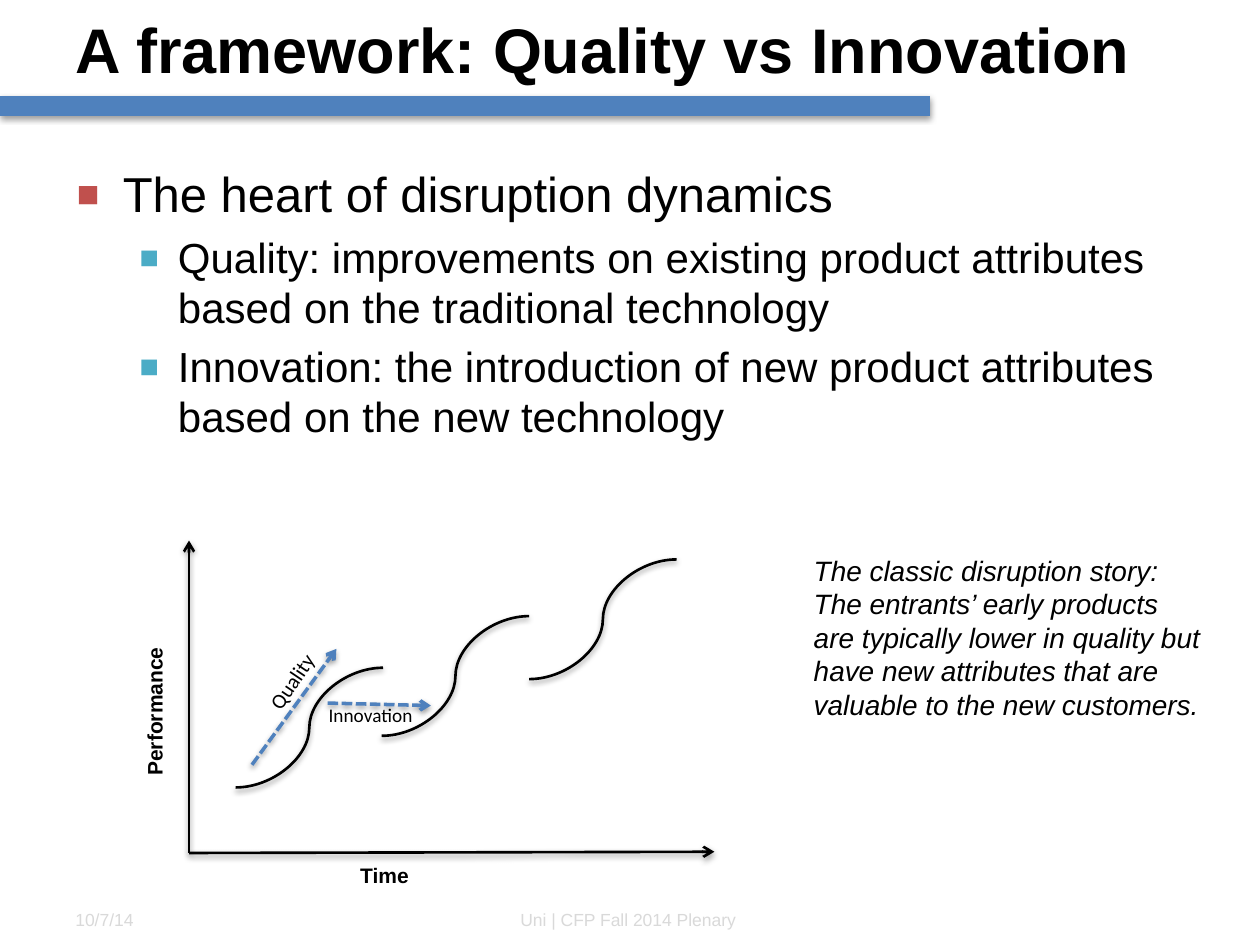
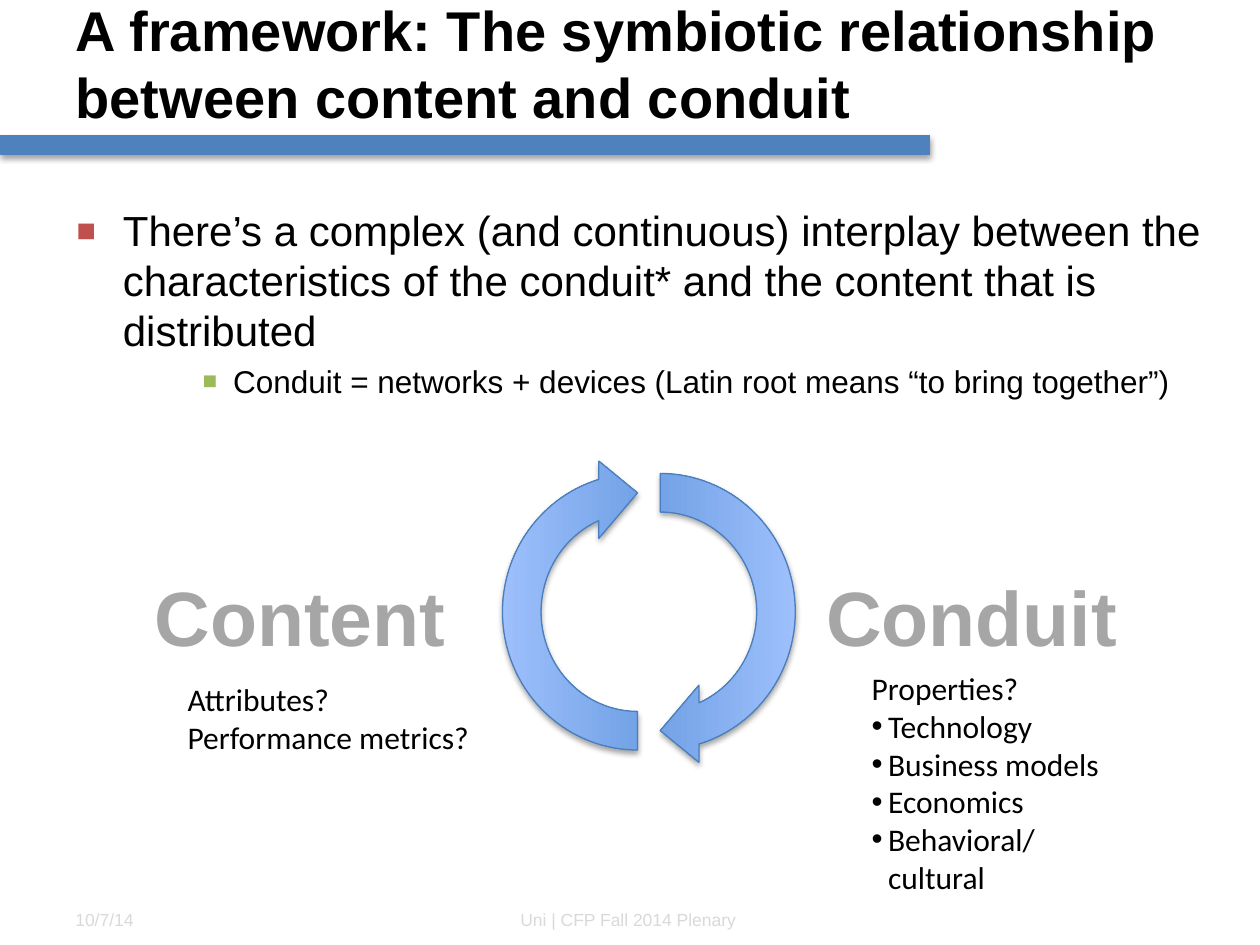
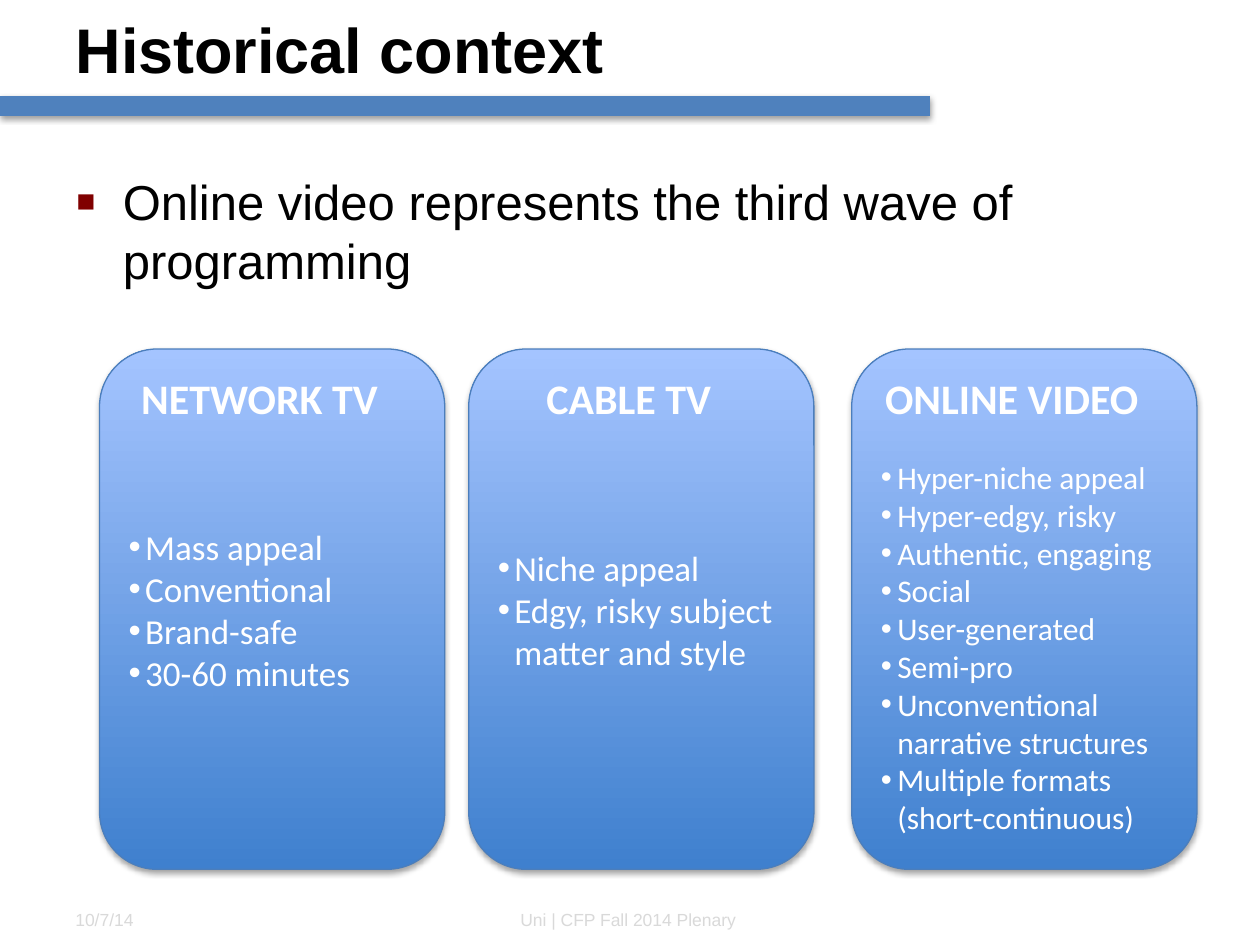
"""Builds three slides on disruption, content and conduit, and waves of programming."""
from dataclasses import dataclass
from typing import NamedTuple, Optional

from lxml.etree import SubElement
from pptx import Presentation
from pptx.dml.color import RGBColor
from pptx.enum.dml import MSO_LINE
from pptx.enum.shapes import MSO_CONNECTOR, MSO_SHAPE
from pptx.enum.text import MSO_ANCHOR, MSO_AUTO_SIZE, PP_ALIGN
from pptx.oxml.ns import qn
from pptx.util import Emu, Pt

EMU_PER_PX = 9144
BLACK, WHITE, BLUE = "000000", "FFFFFF", "4F81BD"
RED, TEAL, GREEN, MAROON = "C0504D", "4BACC6", "9BBB59", "800000"
FOOTER_GRAY, WORD_GRAY = "D9D9D9", "A6A6A6"
GRADIENT_BOTTOM, GRADIENT_TOP, OUTLINE = "3F80CE", "A4C4FF", "4B7EBC"


class Box(NamedTuple):
    """Left, top, width and height in px."""
    left: int
    top: int
    width: int
    height: int


class Bullet(NamedTuple):
    """A bullet sign with its colour, size in percent and own hanging indent in px."""
    sign: str
    color: Optional[str] = None
    percent: int = 100
    indent: Optional[int] = None


@dataclass(frozen=True)
class Stroke:
    """A connector between two points in px."""
    start: tuple[int, int]
    end: tuple[int, int]
    color: str = BLACK
    weight: float = 1.5
    curved: bool = False
    dashed: bool = False
    arrow: bool = False


@dataclass(frozen=True)
class Label:
    """A free text box."""
    box: Box
    text: str
    size: int
    font: str = "Arial"
    color: str = BLACK
    bold: bool = False
    italic: bool = False
    align: PP_ALIGN = PP_ALIGN.LEFT
    rotation: float = 0
    anchor: MSO_ANCHOR = MSO_ANCHOR.TOP


@dataclass(frozen=True)
class Panel:
    """A rounded panel with a heading and bullet points."""
    left: int
    heading: str
    points: tuple[str, ...]
    size: int = 20
    top_margin: int = 5


class ListItem(NamedTuple):
    """A line of the body list."""
    text: str
    size: int
    bullet: Bullet
    level: int = 0
    space_after: Optional[int] = None


DOT = Bullet("•", indent=13)
FOOTERS = (
    Label(Box(50, 710, 233, 40), "10/7/14", 10, color=FOOTER_GRAY, anchor=MSO_ANCHOR.MIDDLE),
    Label(Box(340, 710, 317, 40), "Uni | CFP Fall 2014 Plenary", 10, color=FOOTER_GRAY,
          align=PP_ALIGN.CENTER, anchor=MSO_ANCHOR.MIDDLE),
)


def px(length: int) -> Emu:
    """Turn px into EMU."""
    return Emu(length * EMU_PER_PX)


def rgb(color: str) -> RGBColor:
    """Turn a hex string into a colour."""
    return RGBColor.from_string(color)


def place(shape, box: Box) -> None:
    """Move and size a shape."""
    shape.left, shape.top, shape.width, shape.height = map(px, box)


def set_bullet(paragraph, bullet: Bullet) -> None:
    """Give a paragraph its bullet."""
    properties = paragraph._p.get_or_add_pPr()
    if bullet.indent is not None:
        properties.set("marL", str(px(bullet.indent)))
        properties.set("indent", str(px(-bullet.indent)))
    if bullet.color:
        SubElement(SubElement(properties, qn("a:buClr")), qn("a:srgbClr"), val=bullet.color)
    SubElement(properties, qn("a:buSzPct"), val=str(bullet.percent * 1000))
    SubElement(properties, qn("a:buFont"), typeface="Arial")
    SubElement(properties, qn("a:buChar"), char=bullet.sign)


def write_text(frame, text: str, *, size: int, font: str = "Arial", color: str = BLACK,
               bold: bool = False, italic: bool = False, align: PP_ALIGN = PP_ALIGN.LEFT,
               level: int = 0, bullet: Optional[Bullet] = None,
               space_after: Optional[int] = None) -> None:
    """Write one formatted paragraph at the end of a text frame."""
    first = frame.paragraphs[0]
    paragraph = frame.add_paragraph() if first.runs else first
    paragraph.alignment = align
    paragraph.level = level
    if space_after is not None:
        paragraph.space_after = Pt(space_after)
    if bullet:
        set_bullet(paragraph, bullet)
    run = paragraph.add_run()
    run.text = text
    run.font.name, run.font.size = font, Pt(size)
    run.font.bold, run.font.italic = bold, italic
    run.font.color.rgb = rgb(color)


def add_shadow(shape, opacity: int, distance: int) -> None:
    """Give a shape or connector a soft shadow below it."""
    properties = shape._element.spPr
    effects = properties.find(qn("a:effectLst"))
    if effects is None:
        effects = SubElement(properties, qn("a:effectLst"))
    shadow = SubElement(effects, qn("a:outerShdw"), blurRad="40000", dist=str(distance),
                        dir="5400000", rotWithShape="0")
    color = SubElement(shadow, qn("a:srgbClr"), val=BLACK)
    SubElement(color, qn("a:alpha"), val=str(opacity * 1000))


def add_stroke(slide, stroke: Stroke) -> None:
    """Draw a connector."""
    kind = MSO_CONNECTOR.CURVE if stroke.curved else MSO_CONNECTOR.STRAIGHT
    connector = slide.shapes.add_connector(kind, *map(px, stroke.start + stroke.end))
    connector.line.color.rgb = rgb(stroke.color)
    connector.line.width = Pt(stroke.weight)
    if stroke.dashed:
        connector.line.dash_style = MSO_LINE.SQUARE_DOT
    if stroke.arrow:
        SubElement(connector.line._get_or_add_ln(), qn("a:tailEnd"), type="arrow")
    add_shadow(connector, 38, 20000)


def add_text_box(slide, box: Box, anchor: MSO_ANCHOR = MSO_ANCHOR.TOP):
    """Add an empty wrapping text box."""
    shape = slide.shapes.add_textbox(*map(px, box))
    frame = shape.text_frame
    frame.word_wrap = True
    frame.auto_size = MSO_AUTO_SIZE.NONE
    frame.vertical_anchor = anchor
    return shape


def add_label(slide, label: Label) -> None:
    """Add a text box with one paragraph."""
    shape = add_text_box(slide, label.box, label.anchor)
    shape.rotation = label.rotation
    write_text(shape.text_frame, label.text, size=label.size, font=label.font,
               color=label.color, bold=label.bold, italic=label.italic, align=label.align)


def add_glossy_shape(slide, kind: MSO_SHAPE, box: Box):
    """Add a preset shape with the blue gradient, thin outline and shadow."""
    shape = slide.shapes.add_shape(kind, *map(px, box))
    shape.fill.gradient()
    shape.fill.gradient_angle = 90
    for stop, color in zip(shape.fill.gradient_stops, (GRADIENT_BOTTOM, GRADIENT_TOP)):
        stop.color.rgb = rgb(color)
    shape.line.color.rgb = rgb(OUTLINE)
    shape.line.width = Pt(0.75)
    shape.shadow.inherit = False
    add_shadow(shape, 35, 23000)
    return shape


def add_panel(slide, panel: Panel) -> None:
    """Add a rounded panel with its heading and points."""
    shape = add_glossy_shape(slide, MSO_SHAPE.ROUNDED_RECTANGLE, Box(panel.left, 277, 274, 413))
    frame = shape.text_frame
    frame.word_wrap = True
    frame.vertical_anchor = MSO_ANCHOR.MIDDLE
    frame.margin_top = px(panel.top_margin)
    for point in panel.points:
        write_text(frame, point, size=panel.size, font="Calibri", color=WHITE, bullet=DOT)
    add_label(slide, Label(Box(panel.left, 291, 254, 50), panel.heading, 24, "Calibri", WHITE,
                           bold=True, align=PP_ALIGN.CENTER))


def add_framed_slide(presentation, title: str, body_box: Box, items: tuple[ListItem, ...],
                     title_box: Box = Box(50, 2, 900, 73), title_size: int = 36,
                     bar_height: int = 84):
    """Add a slide with title, bar, list and footers."""
    slide = presentation.slides.add_slide(presentation.slide_layouts[1])
    heading, body = slide.shapes.title, slide.placeholders[1]
    for placeholder, box in ((heading, title_box), (body, body_box)):
        place(placeholder, box)
        placeholder.text_frame.auto_size = MSO_AUTO_SIZE.NONE
    write_text(heading.text_frame, title, size=title_size, bold=True)
    for item in items:
        write_text(body.text_frame, item.text, size=item.size, level=item.level,
                   bullet=item.bullet, space_after=item.space_after)
    add_stroke(slide, Stroke((0, bar_height), (738, bar_height), BLUE, 11.5))
    for footer in FOOTERS:
        add_label(slide, footer)
    return slide


def build_quality_slide(presentation) -> None:
    """Build the slide on quality and innovation."""
    sub_bullet = Bullet("▪", TEAL, 150)
    slide = add_framed_slide(
        presentation, "A framework: Quality vs Innovation", Box(50, 125, 900, 570), (
            ListItem("The heart of disruption dynamics", 28, Bullet("▪", RED, 150)),
            ListItem("Quality: improvements on existing product attributes based on the "
                     "traditional technology", 24, sub_bullet, 1),
            ListItem("Innovation: the introduction of new product attributes based on the "
                     "new technology", 24, sub_bullet, 1)))
    axes = [Stroke((150, 677), end, arrow=True) for end in ((567, 676), (150, 429))]
    curves = [Stroke((left, bottom), (left + 117, bottom - 95), curved=True)
              for left, bottom in ((187, 625), (303, 584), (420, 539))]
    trends = [Stroke(start, end, BLUE, 2, dashed=True, arrow=True)
              for start, end in (((200, 607), (267, 515)), ((260, 558), (342, 560)))]
    for stroke in axes + curves + trends:
        add_stroke(slide, stroke)
    for label in (
        Label(Box(276, 680, 121, 30), "Time", 12, bold=True),
        Label(Box(42, 530, 161, 30), "Performance", 12, bold=True, rotation=270),
        Label(Box(191, 514, 97, 30), "Quality", 12, "Calibri", rotation=304.1),
        Label(Box(251, 553, 119, 29), "Innovation", 11, "Calibri"),
        Label(Box(636, 434, 329, 172),
              "The classic disruption story: The entrants’ early products are typically lower in "
              "quality but have new attributes that are valuable to the new customers.",
              16, italic=True),
    ):
        add_label(slide, label)


def build_conduit_slide(presentation) -> None:
    """Build the slide on content and conduit."""
    slide = add_framed_slide(
        presentation, "A framework: The symbiotic relationship between content and conduit",
        Box(50, 157, 924, 513), (
            ListItem("There’s a complex (and continuous) interplay between the characteristics "
                     "of the conduit* and the content that is distributed", 24,
                     Bullet("▪", RED, 150)),
            ListItem("Conduit = networks + devices (Latin root means “to bring together”)", 18,
                     Bullet("▪", GREEN, 150), 2)),
        Box(50, 13, 924, 73), 32, 115)
    for left, flipped in ((381, False), (399, True)):
        arrow = add_glossy_shape(slide, MSO_SHAPE.CIRCULAR_ARROW, Box(left, 363, 250, 245))
        arrow.rotation = 270
        if flipped:
            for attribute in ("flipH", "flipV"):
                arrow._element.spPr.xfrm.set(attribute, "1")
    for left, word in ((113, "Content"), (646, "Conduit")):
        add_label(slide, Label(Box(left, 447, 251, 84), word, 44, color=WORD_GRAY, bold=True))
    notes = (
        (Box(139, 535, 250, 71), ("Attributes?", "Performance metrics?"), ()),
        (Box(682, 526, 215, 162), ("Properties?",),
         ("Technology", "Business models", "Economics", "Behavioral/cultural")),
    )
    for box, lines, points in notes:
        frame = add_text_box(slide, box).text_frame
        for line in lines:
            write_text(frame, line, size=18, font="Calibri")
        for point in points:
            write_text(frame, point, size=18, font="Calibri", bullet=DOT)


def build_history_slide(presentation) -> None:
    """Build the slide on the three waves of programming."""
    slide = add_framed_slide(
        presentation, "Historical context", Box(50, 131, 900, 121), (
            ListItem("Online video represents the third wave of programming", 28,
                     Bullet("▪", MAROON, 125), space_after=6),))
    for panel in (
        Panel(79, "NETWORK TV",
              ("Mass appeal", "Conventional", "Brand-safe", "30-60 minutes")),
        Panel(372, "CABLE TV", ("Niche appeal", "Edgy, risky subject matter and style")),
        Panel(676, "ONLINE VIDEO",
              ("Hyper-niche appeal", "Hyper-edgy, risky", "Authentic, engaging", "Social",
               "User-generated", "Semi-pro", "Unconventional narrative structures",
               "Multiple formats (short-continuous)"), 18, 65),
    ):
        add_panel(slide, panel)


def main() -> None:
    """Build and save the presentation."""
    presentation = Presentation()
    presentation.slide_width, presentation.slide_height = px(1000), px(750)
    build_quality_slide(presentation)
    build_conduit_slide(presentation)
    build_history_slide(presentation)
    presentation.save("out.pptx")


if __name__ == "__main__":
    main()
